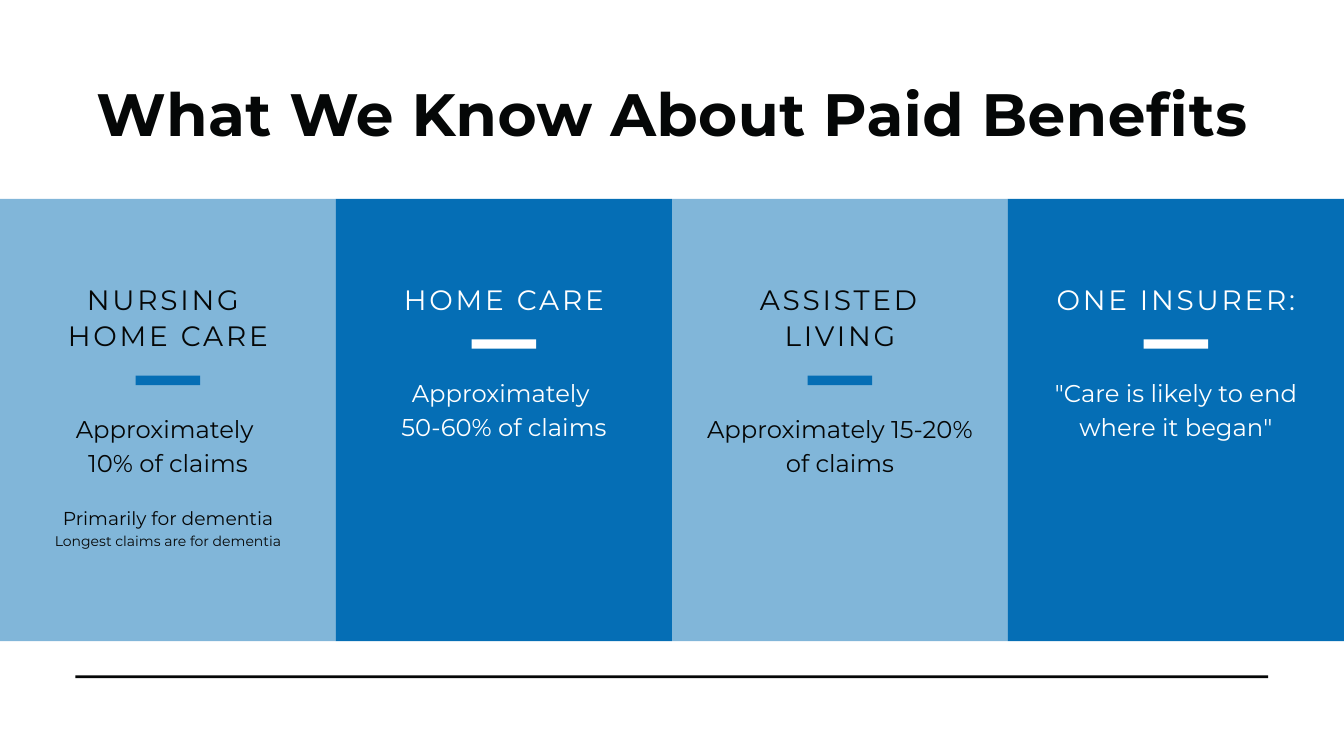
"""Build the paid benefits slide with four claim columns."""
from lxml.etree import SubElement
from pptx import Presentation
from pptx.dml.color import RGBColor
from pptx.enum.shapes import MSO_SHAPE
from pptx.enum.text import MSO_AUTO_SIZE, PP_ALIGN
from pptx.oxml.ns import qn
from pptx.util import Emu, Pt

PX = 9144
COLORS = {"ink": "050707", "blue": "056EB5", "white": "FFFFFF"}
FONT = "Montserrat"

TITLE = "What We Know About Paid Benefits"
COLUMNS = [
    {"heading": ["NURSING ", "HOME CARE"], "lines": 2,
     "body": ["Approximately ", "10% of claims"],
     "notes": [("Primarily for dementia", 20, 28), ("Longest claims are for dementia", 15, 0)]},
    {"heading": ["HOME CARE"], "lines": 1,
     "body": ["Approximately ", "50-60% of claims"], "notes": []},
    {"heading": ["ASSISTED LIVING"], "lines": 2,
     "body": ["Approximately 15-20% of claims"], "notes": []},
    {"heading": ["ONE INSURER:"], "lines": 1,
     "body": ['"Care is likely to end where it began"'], "notes": []},
]

COL_W, COL_TOP, COL_H = 500, 296, 658
TEXT_W, HEAD_TOP, LINE_H = 412, 416, 54
BAR_W, BAR_H = 96, 14


def box(x, y, w, h):
    return [Emu(v * PX) for v in (x, y, w, h)]


def add_rect(shapes, x, y, w, h, color, opacity=100):
    sp = shapes.add_shape(MSO_SHAPE.RECTANGLE, *box(x, y, w, h))
    sp.shadow.inherit = False
    sp.fill.solid()
    sp.fill.fore_color.rgb = RGBColor.from_string(COLORS[color])
    sp.line.fill.background()
    if opacity < 100:
        clr = sp.element.spPr.find(qn("a:solidFill"))[0]
        SubElement(clr, qn("a:alpha")).set("val", str(opacity * 1000))


def add_text(shapes, x, y, w, h, rows, color, leading, spacing=0, bold=False):
    tf = shapes.add_textbox(*box(x, y, w, h)).text_frame
    tf.word_wrap = True
    tf.auto_size = MSO_AUTO_SIZE.SHAPE_TO_FIT_TEXT
    tf.margin_left = tf.margin_top = tf.margin_right = tf.margin_bottom = 0
    for i, (text, size, before) in enumerate(rows):
        p = tf.paragraphs[0] if i == 0 else tf.add_paragraph()
        p.alignment = PP_ALIGN.CENTER
        p.line_spacing = Pt(size * leading)
        if before:
            p.space_before = Pt(before)
        p.font.name = FONT
        p.font.size = Pt(size)
        p.font.bold = bold
        p.font.color.rgb = RGBColor.from_string(COLORS[color])
        r = p.add_run()
        r.text = text
        if spacing:
            r._r.get_or_add_rPr().set("spc", str(spacing))


def add_column(s, i, col):
    left = i * COL_W
    text_x = left + (COL_W - TEXT_W) // 2
    light = i % 2 == 0
    color = "ink" if light else "white"
    shift = (col["lines"] - 1) * LINE_H
    body = [(text, 26, 0) for text in col["body"]] + col["notes"]
    shapes = s.shapes.add_group_shape().shapes
    add_text(shapes, text_x, 555 + shift, TEXT_W, 240 if col["notes"] else 96,
             body, color, 1.4)
    add_text(shapes, text_x, HEAD_TOP, TEXT_W, 51 + shift,
             [(text, 30, 0) for text in col["heading"]], color, 1.3, 300)
    add_rect(shapes, left + (COL_W - BAR_W) // 2, 505 + shift, BAR_W, BAR_H,
             "blue" if light else "white")


def main():
    prs = Presentation()
    prs.slide_width, prs.slide_height = Emu(2000 * PX), Emu(1125 * PX)
    s = prs.slides.add_slide(prs.slide_layouts[6])
    add_text(s.shapes, 137, 105, 1727, 113, [(TITLE, 64, 0)], "ink", 1.3, 60, True)
    for i in range(len(COLUMNS)):
        add_rect(s.shapes, i * COL_W, COL_TOP, COL_W, COL_H, "blue", 100 if i % 2 else 50)
    add_rect(s.shapes, 112, 1005, 1775, 4, "ink")
    for i, col in enumerate(COLUMNS):
        add_column(s, i, col)
    prs.save("out.pptx")


if __name__ == "__main__":
    main()
